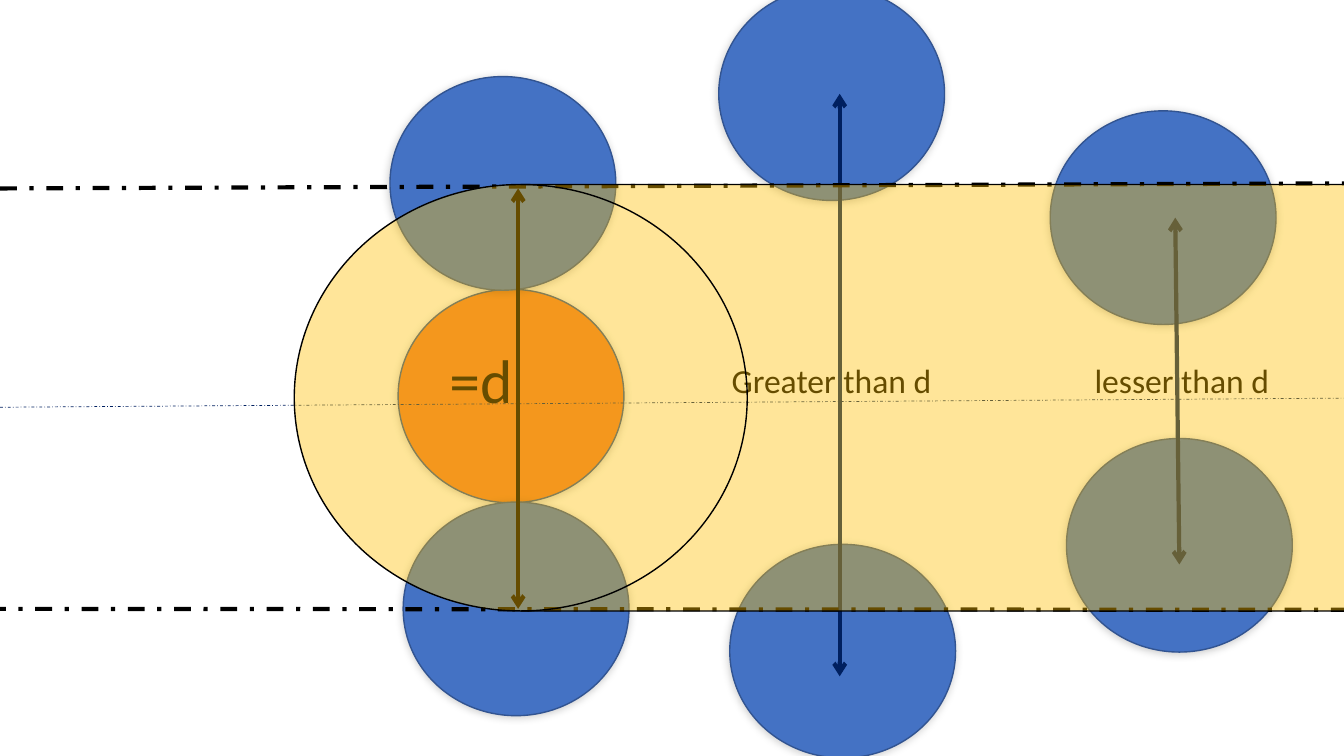
from dataclasses import dataclass
from typing import Optional

import pptx
import pptx.dml.color
import pptx.enum.dml
import pptx.enum.shapes
import pptx.enum.text
import pptx.oxml
import pptx.oxml.ns
import pptx.util

Pt = pptx.util.Pt
RGBColor = pptx.dml.color.RGBColor
Shape = pptx.enum.shapes.MSO_SHAPE
qn = pptx.oxml.ns.qn
NS = pptx.oxml.ns.nsdecls("a")

BLUE = RGBColor(0x44, 0x72, 0xC4)
ORANGE = RGBColor(0xED, 0x7D, 0x31)
OUTLINE = RGBColor(0x32, 0x54, 0x91)
NAVY = RGBColor(0x00, 0x20, 0x60)
BLACK = RGBColor(0x00, 0x00, 0x00)
GOLD = RGBColor(0xFF, 0xC0, 0x00)

DISC_WIDTH, DISC_HEIGHT = 161.3, 152.6
SHADOW = (
    f'<a:outerShdw {NS} blurRad="{Pt(6)}" dist="{Pt(1)}" dir="8100000" '
    'algn="tr" rotWithShape="0"><a:srgbClr val="000000">'
    '<a:alpha val="20000"/></a:srgbClr></a:outerShdw>'
)


@dataclass
class Disc:
    left: float
    top: float
    color: RGBColor = BLUE


@dataclass
class Line:
    x1: float
    y1: float
    x2: float
    y2: float
    color: RGBColor
    width: float = 3
    arrows: bool = False  # arrowheads at both ends, otherwise dash-dot


@dataclass
class Label:
    text: str
    left: float
    top: float
    width: float
    height: float
    size: float = 24


DISCS = [
    Disc(284.4, 206.6, ORANGE),
    Disc(278.6, 54.7), Disc(288, 358.6),
    Disc(513.4, -9.4), Disc(521.3, 388.8),
    Disc(750.2, 79.2), Disc(761.8, 313.2),
]
LINES = [
    # Centre line
    Line(0, 290.9, 960, 284.4, NAVY, width=0.5),
    # Distances between disc centres
    Line(370.1, 134.6, 370.1, 434.9, BLACK, arrows=True),
    Line(599.8, 67, 599.8, 483.1, NAVY, arrows=True),
    Line(839.5, 155.5, 842.4, 403.2, NAVY, arrows=True),
    # Edges of the band
    Line(0, 134.6, 960, 131, BLACK),
    Line(-7.9, 434.9, 960, 435.6, BLACK),
]
LABELS = [
    Label("=d", 313.9, 240.5, 59.8, 60.5, size=44),
    Label("Greater than d", 515.5, 253.4, 158.4, 36),
    Label("lesser than d", 774.7, 253.4, 140.4, 36),
]


def draw_solid(slide, kind: Shape, box: tuple, fill: RGBColor, line: RGBColor,
               opacity: Optional[int] = None):
    solid = slide.shapes.add_shape(kind, *map(Pt, box))
    solid.shadow.inherit = False
    solid.fill.solid()
    solid.fill.fore_color.rgb = fill
    solid.line.color.rgb = line
    solid.line.width = Pt(1)
    if opacity is not None:
        color = solid.element.spPr.find(qn("a:solidFill"))[0]
        color.append(pptx.oxml.parse_xml(f'<a:alpha {NS} val="{opacity * 1000}"/>'))
    return solid


def draw_disc(slide, disc: Disc) -> None:
    box = (disc.left, disc.top, DISC_WIDTH, DISC_HEIGHT)
    ball = draw_solid(slide, Shape.OVAL, box, disc.color, OUTLINE)
    effects = ball.element.spPr.find(qn("a:effectLst"))
    effects.append(pptx.oxml.parse_xml(SHADOW))


def draw_line(slide, line: Line) -> None:
    stroke = slide.shapes.add_connector(
        pptx.enum.shapes.MSO_CONNECTOR.STRAIGHT,
        Pt(line.x1), Pt(line.y1), Pt(line.x2), Pt(line.y2))
    stroke.line.color.rgb = line.color
    stroke.line.width = Pt(line.width)
    properties = stroke.element.spPr
    if line.arrows:
        for end in ("headEnd", "tailEnd"):
            properties.find(qn("a:ln")).append(
                pptx.oxml.parse_xml(f'<a:{end} {NS} type="arrow"/>'))
    else:
        stroke.line.dash_style = pptx.enum.dml.MSO_LINE.DASH_DOT
    properties.append(pptx.oxml.parse_xml(f"<a:effectLst {NS}/>"))


def draw_label(slide, label: Label) -> None:
    frame = slide.shapes.add_textbox(
        Pt(label.left), Pt(label.top), Pt(label.width), Pt(label.height)).text_frame
    frame.word_wrap = False
    frame.auto_size = pptx.enum.text.MSO_AUTO_SIZE.SHAPE_TO_FIT_TEXT
    run = frame.paragraphs[0].add_run()
    run.text = label.text
    run.font.name = "Calibri"
    run.font.size = Pt(label.size)
    run.font.color.rgb = BLACK


def main() -> None:
    deck = pptx.Presentation()
    deck.slide_width, deck.slide_height = Pt(960), Pt(540)
    slide = deck.slides.add_slide(deck.slide_layouts[6])

    for disc in DISCS:
        draw_disc(slide, disc)
    for line in LINES:
        draw_line(slide, line)
    for label in LABELS:
        draw_label(slide, label)

    # Translucent cylinder over everything, open end to the left
    cylinder = draw_solid(slide, Shape.FLOWCHART_DIRECT_ACCESS_STORAGE,
                          (210.2, 131.8, 970.6, 304.6), GOLD, BLACK, opacity=40)
    cylinder.rotation = 180

    deck.save("out.pptx")


if __name__ == "__main__":
    main()
